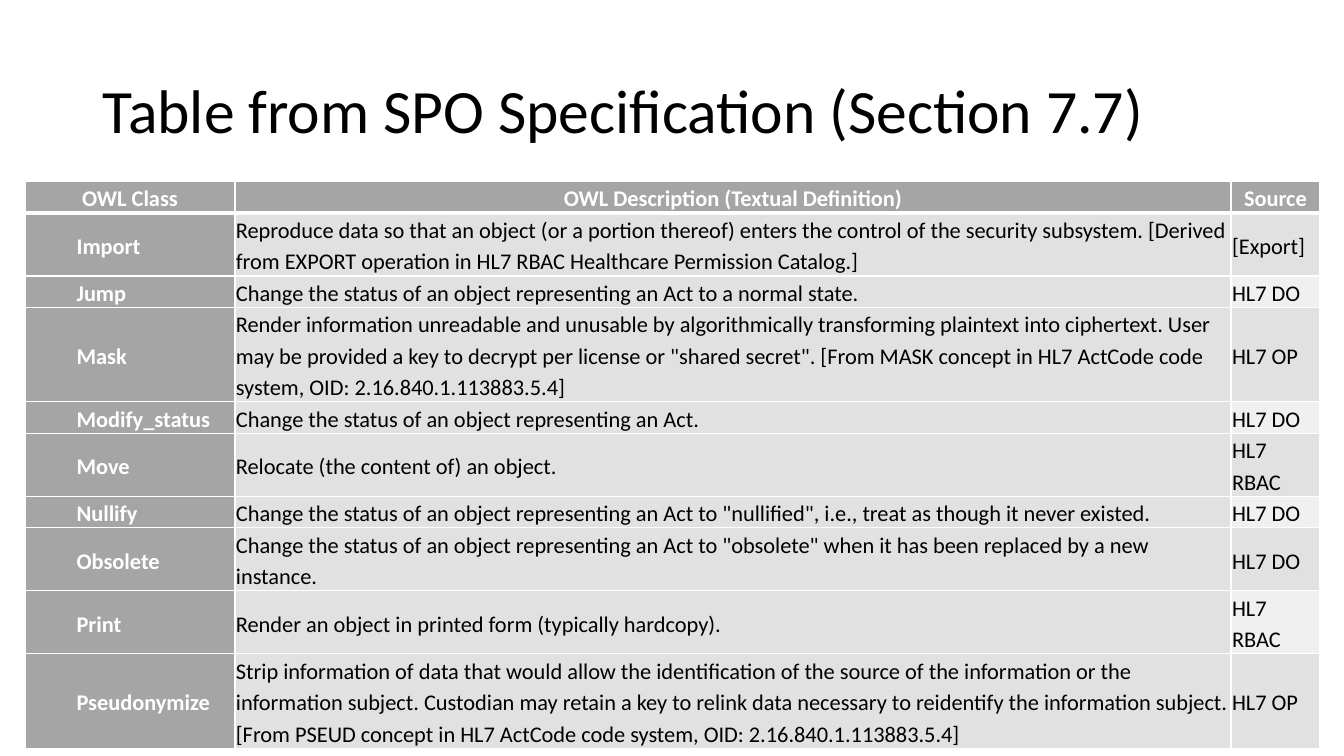
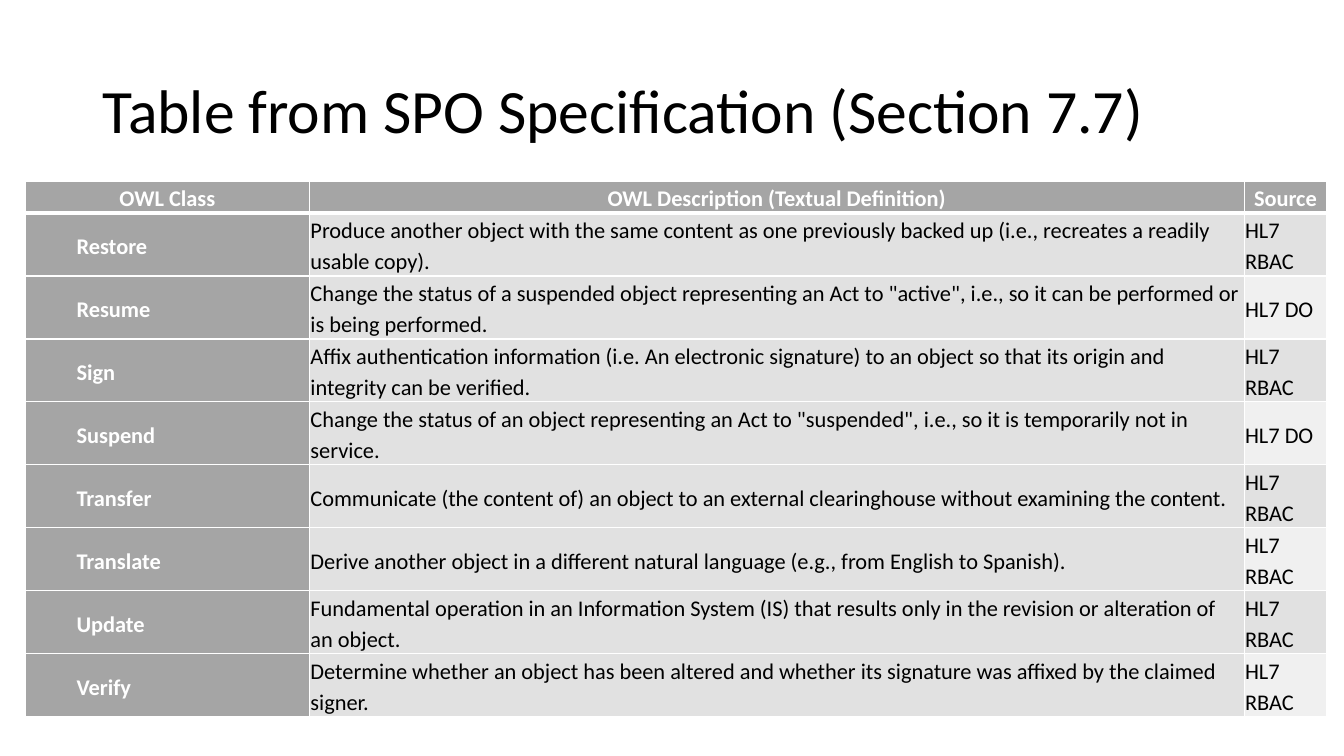
from lxml.etree import SubElement
from pptx import Presentation
from pptx.dml.color import RGBColor
from pptx.enum.text import MSO_ANCHOR, PP_ALIGN
from pptx.oxml.ns import qn
from pptx.util import Inches, Pt

FONT = "Calibri"
BLACK, WHITE, GRAY, BAND_DARK, BAND_LIGHT = "000000", "FFFFFF", "A5A5A5", "E1E1E1", "F0F0F0"
TITLE = "Table from SPO Specification (Section 7.7)"
HEADER = ("OWL Class", "OWL Description (Textual Definition)", "Source")
LINE_HEIGHT = 0.31  # a row of one text line; longer rows grow with their text

# Each slide: column widths in inches, then rows of class, description, source
SLIDES = [
    ((2.08, 9.88, 0.88), [
        ("Import", "Reproduce data so that an object (or a portion thereof) enters the control of the "
         "security subsystem. [Derived from EXPORT operation in HL7 RBAC Healthcare Permission Catalog.]",
         "[Export]"),
        ("Jump", "Change the status of an object representing an Act to a normal state.", "HL7 DO"),
        ("Mask", "Render information unreadable and unusable by algorithmically transforming plaintext "
         "into ciphertext. User may be provided a key to decrypt per license or \"shared secret\". "
         "[From MASK concept in HL7 ActCode code system, OID: 2.16.840.1.113883.5.4]", "HL7 OP"),
        ("Modify_status", "Change the status of an object representing an Act.", "HL7 DO"),
        ("Move", "Relocate (the content of) an object.", "HL7 RBAC"),
        ("Nullify", "Change the status of an object representing an Act to \"nullified\", i.e., treat "
         "as though it never existed.", "HL7 DO"),
        ("Obsolete", "Change the status of an object representing an Act to \"obsolete\" when it has "
         "been replaced by a new instance.", "HL7 DO"),
        ("Print", "Render an object in printed form (typically hardcopy).", "HL7 RBAC"),
        ("Pseudonymize", "Strip information of data that would allow the identification of the source "
         "of the information or the information subject. Custodian may retain a key to relink data "
         "necessary to reidentify the information subject. [From PSEUD concept in HL7 ActCode code "
         "system, OID: 2.16.840.1.113883.5.4]", "HL7 OP"),
    ]),
    ((2.82, 9.27, 0.82), [
        ("Restore", "Produce another object with the same content as one previously backed up (i.e., "
         "recreates a readily usable copy).", "HL7 RBAC"),
        ("Resume", "Change the status of a suspended object representing an Act to \"active\", i.e., "
         "so it can be performed or is being performed.", "HL7 DO"),
        ("Sign", "Affix authentication information (i.e. An electronic signature) to an object so that "
         "its origin and integrity can be verified.", "HL7 RBAC"),
        ("Suspend", "Change the status of an object representing an Act to \"suspended\", i.e., so it "
         "is temporarily not in service.", "HL7 DO"),
        ("Transfer", "Communicate (the content of) an object to an external clearinghouse without "
         "examining the content.", "HL7 RBAC"),
        ("Translate", "Derive another object in a different natural language (e.g., from English to "
         "Spanish).", "HL7 RBAC"),
        ("Update", "Fundamental operation in an Information System (IS) that results only in the "
         "revision or alteration of an object.", "HL7 RBAC"),
        ("Verify", "Determine whether an object has been altered and whether its signature was affixed "
         "by the claimed signer.", "HL7 RBAC"),
    ]),
]


def rgb(color):
    return RGBColor.from_string(color)


def set_font(p, size, color, bold=False):
    p.font.name, p.font.size, p.font.bold = FONT, Pt(size), bold
    p.font.color.rgb = rgb(color)


def add_borders(cell, top=1, bottom=1):
    """Draw white borders; call before the fill, which must follow them in the XML."""
    tc_pr = cell._tc.get_or_add_tcPr()
    for side, width in (("L", 1), ("R", 1), ("T", top), ("B", bottom)):
        ln = SubElement(tc_pr, qn(f"a:ln{side}"), w=str(Pt(width)))
        SubElement(SubElement(ln, qn("a:solidFill")), qn("a:srgbClr"), val=WHITE)


def fill_cell(cell, text, row, col):
    is_header, is_class = row == 0, col == 0
    on_gray = is_header or is_class
    cell.margin_left = Inches(0.51 if is_class and not is_header else 0.01)
    cell.margin_right = Inches(0.01)
    cell.margin_top = cell.margin_bottom = 0
    cell.vertical_anchor = MSO_ANCHOR.TOP if is_header else MSO_ANCHOR.MIDDLE
    add_borders(cell, top=3 if row == 1 else 1, bottom=3 if is_header else 1)
    band = BAND_LIGHT if col == 2 and row % 2 == 0 else BAND_DARK
    cell.fill.solid()
    cell.fill.fore_color.rgb = rgb(GRAY if on_gray else band)

    cell.text = text
    p = cell.text_frame.paragraphs[0]
    p.alignment = PP_ALIGN.CENTER if is_header else PP_ALIGN.LEFT
    p.line_spacing = 1.15
    p.space_before = p.space_after = Pt(10 if is_header else 2)
    set_font(p, 16, WHITE if on_gray else BLACK, bold=on_gray)


def add_title(s):
    title = s.shapes.title
    title.left, title.top, title.width, title.height = map(Inches, (0.92, 0.4, 11.5, 1.45))
    title.text = TITLE
    title.text_frame.vertical_anchor = MSO_ANCHOR.MIDDLE
    p = title.text_frame.paragraphs[0]
    p.alignment, p.line_spacing = PP_ALIGN.LEFT, 0.9
    set_font(p, 44, BLACK)


def add_class_table(s, widths, rows):
    rows = [HEADER, *rows]
    table = s.shapes.add_table(len(rows), len(widths), Inches(0.25), Inches(1.8),
                               Inches(sum(widths)), Inches(LINE_HEIGHT * len(rows))).table
    table.horz_banding = False
    for column, width in zip(table.columns, widths):
        column.width = Inches(width)
    for i, row in enumerate(rows):
        for j, text in enumerate(row):
            fill_cell(table.cell(i, j), text, i, j)


def main():
    prs = Presentation()
    prs.slide_width, prs.slide_height = Inches(13.33), Inches(7.5)
    for widths, rows in SLIDES:
        s = prs.slides.add_slide(prs.slide_layouts.get_by_name("Title Only"))
        add_title(s)
        add_class_table(s, widths, rows)
    prs.save("out.pptx")


if __name__ == "__main__":
    main()
